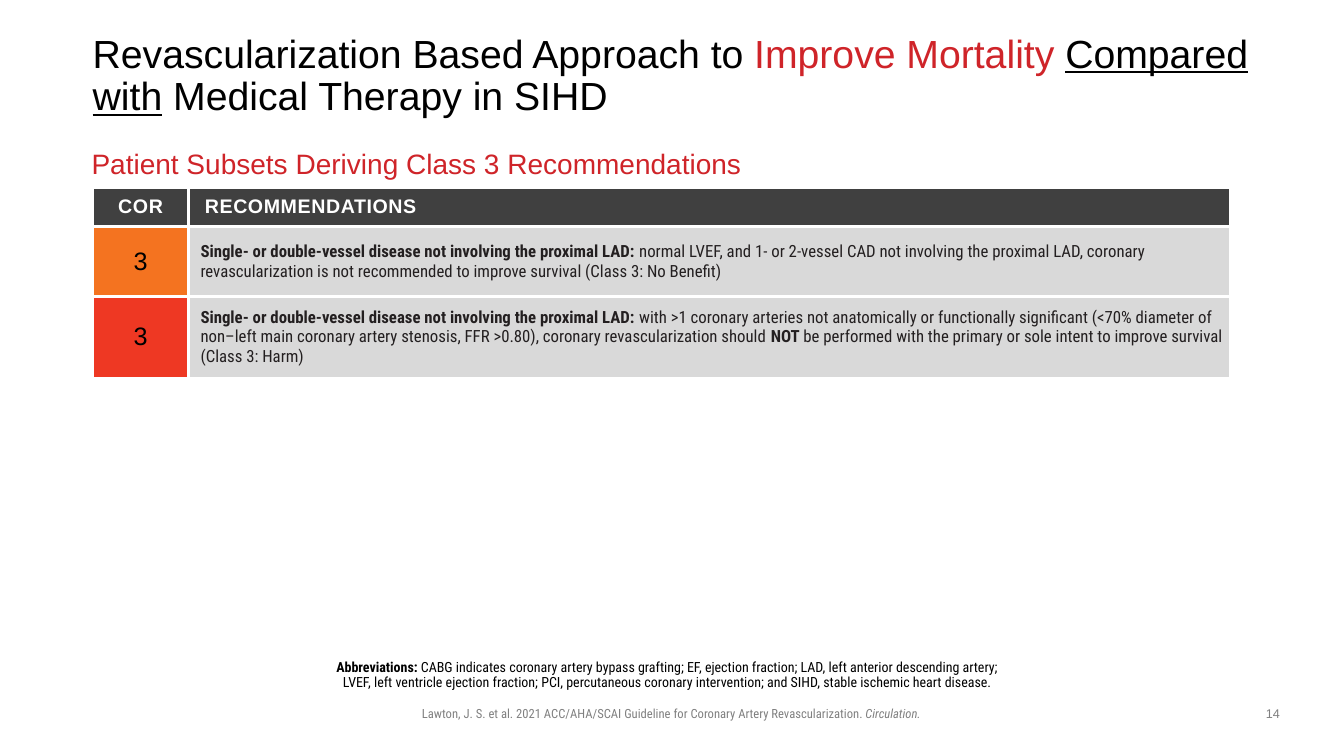
"""Builds the slide on Class 3 revascularization recommendations in SIHD."""
from dataclasses import dataclass

from lxml.etree import SubElement
from pptx import Presentation
from pptx.dml.color import RGBColor
from pptx.enum.text import MSO_ANCHOR, PP_ALIGN
from pptx.oxml import parse_xml
from pptx.oxml.ns import nsdecls
from pptx.util import Pt


@dataclass(frozen=True)
class Theme:
    sans: str = "Arial"
    narrow: str = "Roboto Condensed"
    black: str = "000000"
    white: str = "FFFFFF"
    red: str = "CF2429"
    gray: str = "808080"
    ink: str = "231F20"
    header: str = "404040"
    body: str = "D9D9D9"
    no_benefit: str = "F47320"
    harm: str = "EE3823"
    title_size: float = 28
    subtitle_size: float = 20
    grade_size: float = 18
    header_size: float = 14
    text_size: float = 12
    note_size: float = 10
    footer_size: float = 9
    border: float = 2.25


T = Theme()
BOLD = {"bold": True}

TITLE = [
    ("Revascularization Based Approach to ", {}),
    ("Improve Mortality ", {"color": T.red}),
    ("Compared with", {"underline": True}),
    (" Medical Therapy in SIHD", {}),
]
SUBTITLE = [("Patient Subsets Deriving Class 3 Recommendations", {})]
HEADERS = [("COR", 50, PP_ALIGN.CENTER, 0), ("RECOMMENDATIONS", 40, PP_ALIGN.LEFT, 4.5)]
RECOMMENDATIONS = [
    ("3", T.no_benefit, [
        ("Single- or double-vessel disease not involving the proximal LAD: ", BOLD),
        ("normal LVEF, and 1- or 2-vessel CAD not involving the proximal LAD, coronary "
         "revascularization is not recommended to improve survival (Class 3: No Benefit)", {}),
    ]),
    ("3", T.harm, [
        ("Single- or double-vessel disease not involving the proximal LAD: ", BOLD),
        ("with >1 coronary arteries not anatomically or functionally significant (<70% diameter "
         "of non–left main coronary artery stenosis, FFR >0.80), coronary revascularization should ", {}),
        ("NOT", BOLD),
        (" be performed with the primary or sole intent to improve survival (Class 3: Harm)", {}),
    ]),
]
ABBREVIATIONS = [
    ("Abbreviations: ", BOLD),
    ("CABG indicates coronary artery bypass grafting; EF, ejection fraction; LAD, left anterior "
     "descending artery; LVEF, left ventricle ejection fraction; PCI, percutaneous coronary "
     "intervention; and SIHD, stable ischemic heart disease.", {}),
]
CITATION = [
    ("Lawton, J. S. et al. 2021 ACC/AHA/SCAI Guideline for Coronary Artery Revascularization. ", {}),
    ("Circulation.", {"italic": True}),
]
PAGE = [("14", {})]

TABLE_BOX = (66.24, 133.9, 812.9, 136.1)
COLUMNS = (68.4, 744.5)
ROWS = (28.1, 49.7, 58.3)
CELL_INSET = 3.6
TEXT_INDENT = 5


def write(p, runs, font, size, color, align=PP_ALIGN.LEFT, line=1.0):
    p.alignment, p.line_spacing = align, line
    p.font.name, p.font.size = font, Pt(size)
    for text, style in runs:
        r = p.add_run()
        r.text = text
        r.font.color.rgb = RGBColor.from_string(style.get("color", color))
        r.font.bold = style.get("bold", False)
        r.font.italic = style.get("italic")
        r.font.underline = style.get("underline")


def set_insets(item, insets):
    item.margin_left, item.margin_top, item.margin_right, item.margin_bottom = map(Pt, insets)


def add_text(s, box, runs, *style, insets=(7.2, 3.6, 7.2, 3.6), anchor=MSO_ANCHOR.TOP, **layout):
    tf = s.shapes.add_textbox(*map(Pt, box)).text_frame
    tf.word_wrap, tf.vertical_anchor = True, anchor
    set_insets(tf, insets)
    write(tf.paragraphs[0], runs, *style, **layout)


def style_cell(cell, fill):
    cell.fill.solid()
    cell.fill.fore_color.rgb = RGBColor.from_string(fill)
    cell.vertical_anchor = MSO_ANCHOR.MIDDLE
    props = cell._tc.get_or_add_tcPr()
    for i, side in enumerate(("lnL", "lnR", "lnT", "lnB")):
        ln = parse_xml(f'<a:{side} {nsdecls("a")} w="{Pt(T.border)}"><a:solidFill/></a:{side}>')
        SubElement(ln[0], ln[0].tag.replace("solidFill", "srgbClr"), val=T.white)
        props.insert(i, ln)


def indent(p, points):
    p._p.get_or_add_pPr().set("marL", str(Pt(points)))


def add_recommendations(s):
    table = s.shapes.add_table(len(ROWS), len(COLUMNS), *map(Pt, TABLE_BOX)).table
    table.horz_banding = False
    for column, width in zip(table.columns, COLUMNS):
        column.width = Pt(width)
    for row, height in zip(table.rows, ROWS):
        row.height = Pt(height)

    for j, (label, tracking, align, left) in enumerate(HEADERS):
        cell = table.cell(0, j)
        style_cell(cell, T.header)
        p = cell.text_frame.paragraphs[0]
        indent(p, left)
        write(p, [(label, BOLD)], T.sans, T.header_size, T.white, align)
        p.runs[0].font._element.set("spc", str(tracking))

    for i, (grade, color, runs) in enumerate(RECOMMENDATIONS, 1):
        grade_cell, text_cell = table.cell(i, 0), table.cell(i, 1)
        for cell, fill in ((grade_cell, color), (text_cell, T.body)):
            style_cell(cell, fill)
            set_insets(cell, (CELL_INSET,) * 4)
        write(grade_cell.text_frame.paragraphs[0], [(grade, {})],
              T.sans, T.grade_size, T.black, PP_ALIGN.CENTER)
        p = text_cell.text_frame.paragraphs[0]
        indent(p, TEXT_INDENT)
        write(p, runs, T.narrow, T.text_size, T.ink)


def main():
    prs = Presentation()
    prs.slide_width, prs.slide_height = Pt(960), Pt(540)
    s = prs.slides.add_slide(prs.slide_layouts[6])
    add_text(s, (228.2, 500.4, 502.6, 18), CITATION, T.narrow, T.footer_size, T.gray,
             align=PP_ALIGN.CENTER)
    add_text(s, (66.24, 28.8, 828, 51.8), TITLE, T.sans, T.title_size, T.black,
             insets=(0, 0, 0, 0), anchor=MSO_ANCHOR.MIDDLE, line=0.9)
    add_text(s, (58.3, 103.7, 681, 28.8), SUBTITLE, T.sans, T.subtitle_size, T.red, line=0.9)
    add_recommendations(s)
    add_text(s, (231.1, 468, 497.5, 21.6), ABBREVIATIONS, T.narrow, T.note_size, T.black,
             insets=(0, 3.6, 7.2, 3.6), align=PP_ALIGN.CENTER, line=0.9)
    add_text(s, (894.2, 500.4, 30.2, 18.7), PAGE, T.sans, T.footer_size, T.gray,
             align=PP_ALIGN.CENTER)
    prs.save("out.pptx")


if __name__ == "__main__":
    main()
